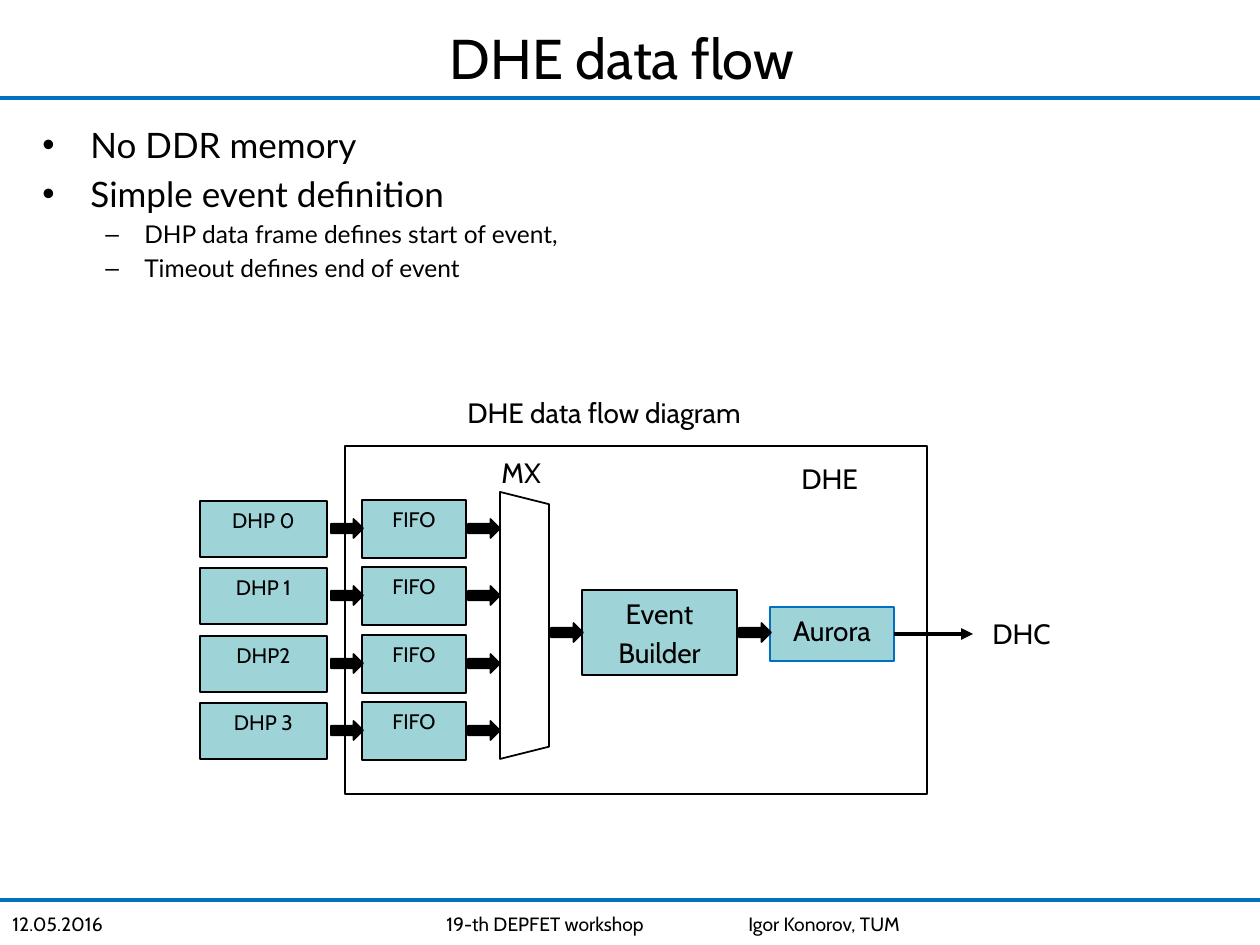
"""Build the DHE data flow slide."""
from lxml import etree
from pptx import Presentation, util as u
from pptx.dml.color import RGBColor
from pptx.enum import shapes, text
from pptx.oxml.ns import qn

PX = 914400 / 126
INK, BLUE, TEAL = "000000", "0070C0", "9ED3D7"
RECT = shapes.MSO_SHAPE.RECTANGLE
ARROW = shapes.MSO_SHAPE.RIGHT_ARROW
TRAP = shapes.MSO_SHAPE.TRAPEZOID
MID = text.PP_ALIGN.CENTER

TITLE = "DHE data flow"
BULLETS = [
    (0, "No DDR memory"),
    (0, "Simple event definition"),
    (1, "DHP data frame defines start of event,"),
    (1, "Timeout defines end of event"),
]
LEVELS = [("•", 48, -48, 20), ("–", 102, -39, 14)]
RULES = [98, 900]
FOOTER = [("12.05.2016", 0, 168), ("19-th DEPFET workshop", 434, 224),
          ("Igor Konorov, TUM", 736, 178)]
SOURCES = ["DHP 0", "DHP 1", "DHP2", "DHP 3"]
ROW, STEP = 501, 67.4
LABELS = [("DHC", 980, 610, 87), ("DHE", 789, 455, 84),
          ("DHE data flow diagram", 455, 389, 315), ("MX", 489, 449, 68)]


def px(*vals):
    return [u.Emu(round(v * PX)) for v in vals]


def rgb(code):
    return RGBColor.from_string(code)


def style(para, size, face="Cabin", align=None):
    font = para.font
    font.name, font.size, font.color.rgb = face, u.Pt(size), rgb(INK)
    if align is not None:
        para.alignment = align


def shape(kind, box, fill=None, line=INK, lines=(), size=12):
    item = slide.shapes.add_shape(kind, *px(*box))
    item.shadow.inherit = False
    if fill:
        item.fill.solid()
        item.fill.fore_color.rgb = rgb(fill)
    else:
        item.fill.background()
    item.line.color.rgb, item.line.width = rgb(line), u.Pt(1)
    frame = item.text_frame
    frame.vertical_anchor = text.MSO_ANCHOR.TOP
    for i, words in enumerate(lines):
        para = frame.add_paragraph() if i else frame.paragraphs[0]
        para.text = words
        if i:
            para.space_before = u.Pt(size * 0.2)
        style(para, size, align=MID)
    return item


def line(x1, y1, x2, y2, color):
    item = slide.shapes.add_connector(
        shapes.MSO_CONNECTOR.STRAIGHT, *px(x1, y1, x2, y2))
    item.line.color.rgb, item.line.width = rgb(color), u.Pt(2.25)
    etree.SubElement(item.line._get_or_add_ln().getparent(), qn("a:effectLst"))
    return item


def label(words, x, y, w, h, size, wrap):
    frame = slide.shapes.add_textbox(*px(x, y, w, h)).text_frame
    frame.word_wrap = wrap
    if not wrap:
        frame.auto_size = text.MSO_AUTO_SIZE.SHAPE_TO_FIT_TEXT
    frame.text = words
    style(frame.paragraphs[0], size)


def bullets(frame):
    frame.word_wrap = True
    for i, (level, words) in enumerate(BULLETS):
        mark, left, hang, size = LEVELS[level]
        para = frame.add_paragraph() if i else frame.paragraphs[0]
        para.text, para.level = words, level
        if i:
            para.space_before = u.Pt(size * 0.2)
        props = para._p.get_or_add_pPr()
        for key, val in zip(("marL", "indent"), px(left, hang)):
            props.set(key, str(int(val)))
        etree.SubElement(props, qn("a:buFont"), typeface="Arial")
        etree.SubElement(props, qn("a:buChar"), char=mark)
        style(para, size, "Lato")


deck = Presentation()
deck.slide_width, deck.slide_height = px(1260, 945)
slide = deck.slides.add_slide(deck.slide_layouts[5])

for y in RULES:
    line(0, y, 1260, y, BLUE)
title = slide.shapes.title
title.left, title.top, title.width, title.height = px(48, 19, 1148, 77)
title.text_frame.text = TITLE
title.text_frame.vertical_anchor = text.MSO_ANCHOR.MIDDLE
style(title.text_frame.paragraphs[0], 32, align=MID)
bullets(slide.shapes.add_textbox(*px(30, 117, 1207, 220)).text_frame)
for words, x, w in FOOTER:
    label(words, x, 906, w, 39, 11, True)

shape(RECT, (345, 446, 582, 348))
shape(TRAP, (391, 601, 267, 49)).rotation = 90
for i, name in enumerate(SOURCES):
    y = ROW + round(i * STEP)
    shape(RECT, (200, y, 127, 56), TEAL, lines=[name])
    shape(RECT, (362, y - 1, 104, 58), TEAL, lines=["FIFO"])
    for x in (331, 468):
        shape(ARROW, (x, y + 18, 32, 19), INK)
shape(RECT, (582, 590, 155, 85), TEAL, lines=["Event", "Builder"], size=16)
aurora = shape(RECT, (770, 607, 124, 54), TEAL, BLUE, ["Aurora"], 16)
for x in (551, 739):
    shape(ARROW, (x, 623, 32, 19), INK)
link = line(894, 634, 973, 634, INK)
link.begin_connect(aurora, 3)
etree.SubElement(link.line._get_or_add_ln(), qn("a:tailEnd"), type="triangle")
for words, x, y, w in LABELS:
    label(words, x, y, w, 47, 16, False)

deck.save("out.pptx")
